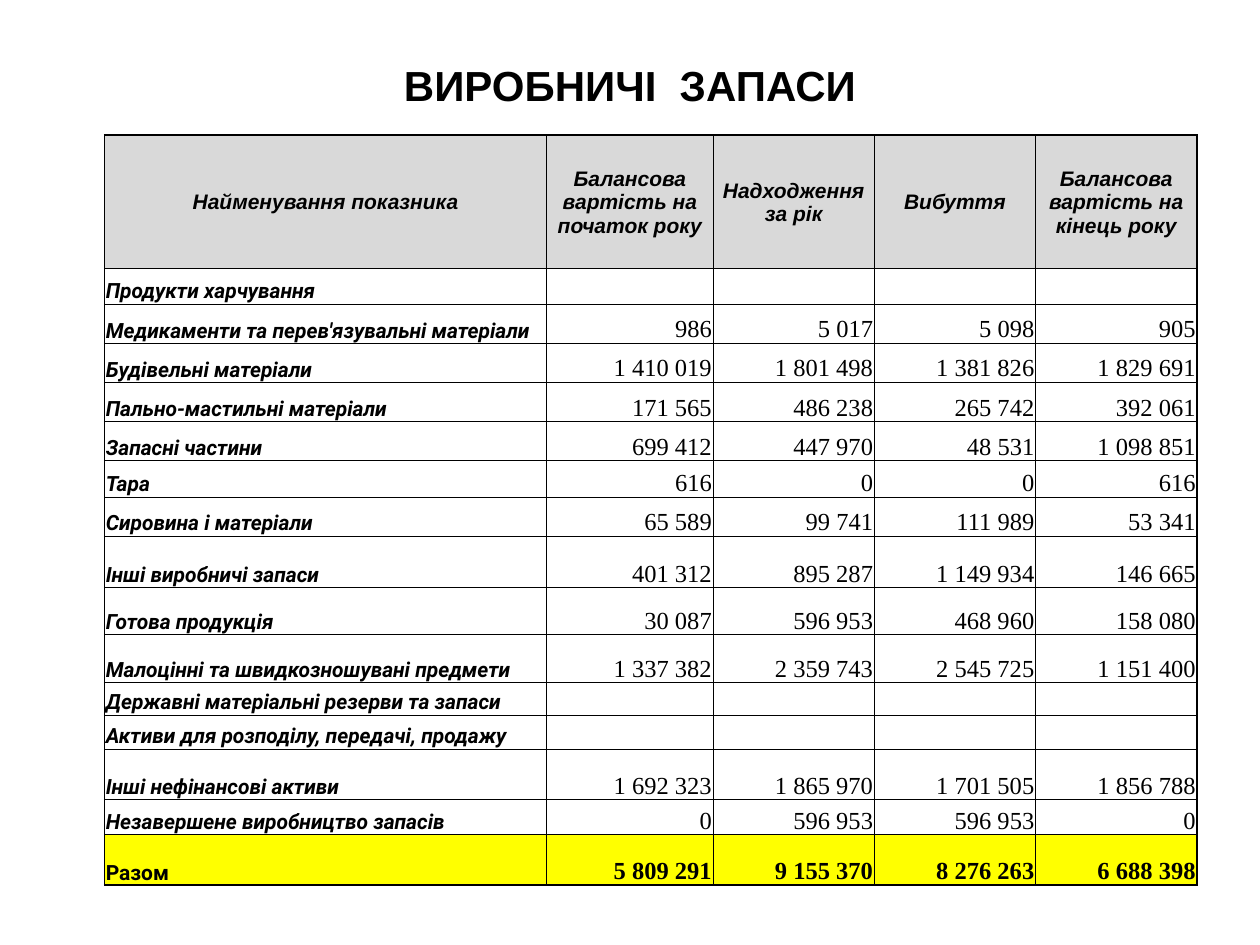
from dataclasses import dataclass

from lxml import etree
from pptx import Presentation
from pptx.dml.color import RGBColor
from pptx.enum.text import MSO_ANCHOR, PP_ALIGN
from pptx.oxml.ns import qn
from pptx.util import Inches, Pt

LEFT, CENTER, RIGHT = PP_ALIGN.LEFT, PP_ALIGN.CENTER, PP_ALIGN.RIGHT
MIDDLE, BOTTOM = MSO_ANCHOR.MIDDLE, MSO_ANCHOR.BOTTOM
TITLE_ONLY = 5


@dataclass(frozen=True)
class Theme:
    """Colours, fonts, type sizes and line widths of the slide."""
    ink: str = "000000"
    head_fill: str = "D9D9D9"
    total_fill: str = "FFFF00"
    head_font: str = "Arial"
    label_font: str = "Roboto"
    number_font: str = "Times New Roman"
    title_size: int = 24
    label_size: int = 12
    number_size: int = 14
    inner_line: float = 0.5
    outer_line: float = 1


THEME = Theme()
TITLE_BOX = (0.05, 0.04, 0.9, 0.1)
TABLE_BOX = (0.083, 0.143, 0.867, 0.794)
COLUMNS = (3.51, 1.32, 1.28, 1.28, 1.28)
HEADER_ROW = 1.06
HEADINGS = ("Найменування показника", "Балансова вартість на початок року",
            "Надходження за рік", "Вибуття", "Балансова вартість на кінець року")
STOCKS = (
    (0.28, "Продукти харчування", "", "", "", ""),
    (0.31, "Медикаменти та перев'язувальні матеріали", "986", "5 017", "5 098", "905"),
    (0.31, "Будівельні матеріали", "1 410 019", "1 801 498", "1 381 826", "1 829 691"),
    (0.31, "Пально-мастильні матеріали", "171 565", "486 238", "265 742", "392 061"),
    (0.31, "Запасні частини", "699 412", "447 970", "48 531", "1 098 851"),
    (0.29, "Тара", "616", "0", "0", "616"),
    (0.31, "Сировина і матеріали", "65 589", "99 741", "111 989", "53 341"),
    (0.41, "Інші виробничі запаси", "401 312", "895 287", "1 149 934", "146 665"),
    (0.37, "Готова продукція", "30 087", "596 953", "468 960", "158 080"),
    (0.38, "Малоцінні та швидкозношувані предмети",
     "1 337 382", "2 359 743", "2 545 725", "1 151 400"),
    (0.26, "Державні матеріальні резерви та запаси", "", "", "", ""),
    (0.27, "Активи для розподілу, передачі, продажу", "", "", "", ""),
    (0.4, "Інші нефінансові активи", "1 692 323", "1 865 970", "1 701 505", "1 856 788"),
    (0.28, "Незавершене виробництво запасів", "0", "596 953", "596 953", "0"),
    (0.4, "Разом", "5 809 291", "9 155 370", "8 276 263", "6 688 398"),
)


def place(prs, box):
    """Turn shares of the slide into left, top, width and height."""
    sides = (prs.slide_width, prs.slide_height) * 2
    return [int(share * side) for share, side in zip(box, sides)]


def style(p, font, size, bold, italic, align):
    """Format one paragraph."""
    p.alignment = align
    p.font.name, p.font.size = font, Pt(size)
    p.font.bold, p.font.italic = bold, italic
    p.font.color.rgb = RGBColor.from_string(THEME.ink)


def add_border(cell, side, width):
    """Draw one side of a cell."""
    ln = etree.SubElement(cell._tc.get_or_add_tcPr(), qn(f"a:ln{side}"), w=str(Pt(width)))
    fill = etree.SubElement(ln, qn("a:solidFill"))
    etree.SubElement(fill, qn("a:srgbClr"), val=THEME.ink)


def fill_cell(cell, text, row, col, last_row, last_col):
    """Write a cell and format it by its place in the table."""
    head, total, label = row == 0, row == last_row, col == 0
    cell.margin_left = cell.margin_right = cell.margin_top = Inches(0.01)
    cell.margin_bottom = 0
    cell.vertical_anchor = MIDDLE if head else BOTTOM
    outer = {"L": label, "R": col == last_col, "T": head, "B": total}
    for side, edge in outer.items():
        add_border(cell, side, THEME.outer_line if edge else THEME.inner_line)
    if head or total:
        cell.fill.solid()
        cell.fill.fore_color.rgb = RGBColor.from_string(
            THEME.head_fill if head else THEME.total_fill)
    else:
        cell.fill.background()
    cell.text = text
    p = cell.text_frame.paragraphs[0]
    if head:
        style(p, THEME.head_font, THEME.label_size, True, True, CENTER)
    elif label or not text:
        style(p, THEME.label_font, THEME.label_size, True, not total, LEFT)
    else:
        style(p, THEME.number_font, THEME.number_size, total, False, RIGHT)


def add_title(s, box):
    """Place the slide title."""
    title = s.shapes.title
    title.left, title.top, title.width, title.height = box
    title.text_frame.text = "ВИРОБНИЧІ  ЗАПАСИ"
    title.text_frame.vertical_anchor = MIDDLE
    style(title.text_frame.paragraphs[0], THEME.head_font, THEME.title_size, True, False, CENTER)


def add_stock_table(s, box):
    """Place the table of stocks, sharing the box among its columns and rows."""
    heights = [HEADER_ROW] + [stock[0] for stock in STOCKS]
    rows = [HEADINGS] + [stock[1:] for stock in STOCKS]
    table = s.shapes.add_table(len(rows), len(COLUMNS), *box).table
    table.horz_banding = False
    for column, share in zip(table.columns, COLUMNS):
        column.width = int(box[2] * share / sum(COLUMNS))
    for row, share in zip(table.rows, heights):
        row.height = int(box[3] * share / sum(heights))
    for i, texts in enumerate(rows):
        for j, text in enumerate(texts):
            fill_cell(table.cell(i, j), text, i, j, len(rows) - 1, len(COLUMNS) - 1)


def main():
    """Build and save the slide."""
    prs = Presentation()
    prs.slide_width, prs.slide_height = Inches(10), Inches(7.5)
    s = prs.slides.add_slide(prs.slide_layouts[TITLE_ONLY])
    add_title(s, place(prs, TITLE_BOX))
    add_stock_table(s, place(prs, TABLE_BOX))
    prs.save("out.pptx")


if __name__ == "__main__":
    main()
